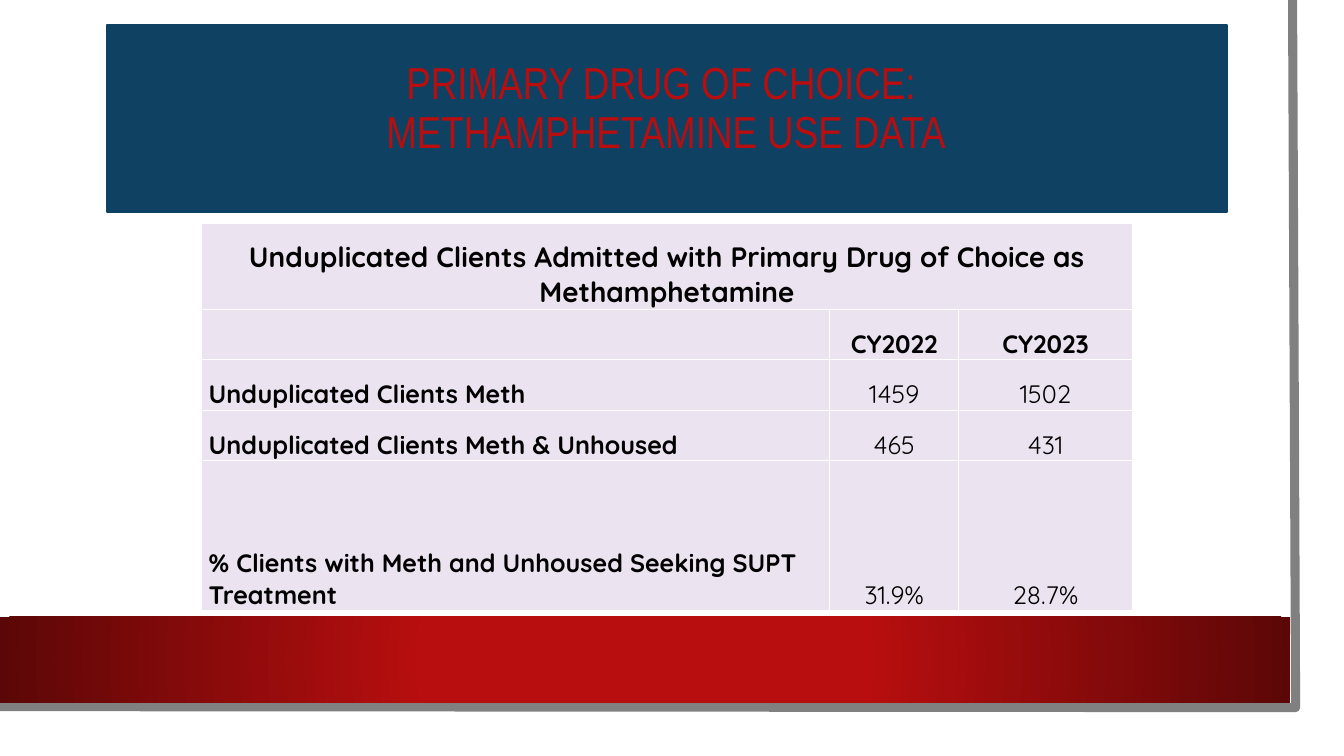
"""Builds the slide with methamphetamine use data."""
from lxml import etree
from pptx import Presentation
from pptx.dml.color import RGBColor
from pptx.enum.shapes import MSO_SHAPE
from pptx.enum.text import MSO_ANCHOR, PP_ALIGN
from pptx.oxml import parse_xml
from pptx.oxml.ns import nsdecls, qn
from pptx.util import Inches, Pt

RECTANGLE = MSO_SHAPE.RECTANGLE
MIDDLE, BOTTOM = MSO_ANCHOR.MIDDLE, MSO_ANCHOR.BOTTOM
LEFT, CENTER = PP_ALIGN.LEFT, PP_ALIGN.CENTER

WHITE, BLACK, GRAY = "FFFFFF", "000000", "808080"
NAVY, RED, DARK_RED, LILAC = "0F4162", "B80E0F", "5C0707", "EBE3F0"

TITLE = "PRIMARY DRUG OF CHOICE: \vMETHAMPHETAMINE USE DATA"
TABLE_TITLE = "Unduplicated Clients Admitted with Primary Drug of Choice as Methamphetamine"
ROWS = [
    (TABLE_TITLE, "", ""),
    ("", "CY2022", "CY2023"),
    ("Unduplicated Clients Meth", "1459", "1502"),
    ("Unduplicated Clients Meth & Unhoused", "465", "431"),
    ("% Clients with Meth and Unhoused Seeking SUPT Treatment", "31.9%", "28.7%"),
]
COLUMN_WIDTHS = [6.23, 1.28, 1.72]
ROW_HEIGHTS = [0.85, 0.5, 0.5, 0.5, 1.49]
EDGE_POINTS = [(12.82, 0), (12.85, 7.02), (-0.03, 7.01)]


def color(value):
    return RGBColor.from_string(value)


def write(frame, text, size=18, font="Quicksand", fill=BLACK, bold=False,
          align=CENTER, spacing=1.0):
    para = frame.paragraphs[0]
    para.text = text
    para.alignment = align
    para.line_spacing = spacing
    for span in para.runs:
        span.font.size = Pt(size)
        span.font.name = font
        span.font.bold = bold
        span.font.color.rgb = color(fill)


def add_panel(page, left, top, width, height, fill, line=None):
    panel = page.shapes.add_shape(RECTANGLE, *map(Inches, (left, top, width, height)))
    panel.shadow.inherit = False
    panel.fill.solid()
    panel.fill.fore_color.rgb = color(fill)
    if line:
        panel.line.color.rgb = color(line)
        panel.line.width = Pt(1.5)
    else:
        panel.line.fill.background()
    return panel


def add_edge(page):
    points = [(Inches(x), Inches(y)) for x, y in EDGE_POINTS]
    builder = page.shapes.build_freeform(*points[0])
    builder.add_line_segments(points[1:], close=False)
    edge = builder.convert_to_shape()
    edge.shadow.inherit = False
    edge.fill.background()
    edge.line.color.rgb = color(GRAY)
    edge.line.width = Pt(6.5)


def add_radial_fill(shape, stops):
    marks = "".join(f'<a:gs pos="{at * 1000}"><a:srgbClr val="{value}"/></a:gs>'
                    for at, value in stops)
    gradient = parse_xml(
        f'<a:gradFill {nsdecls("a")}><a:gsLst>{marks}</a:gsLst><a:path path="circle">'
        '<a:fillToRect l="50000" t="50000" r="50000" b="50000"/></a:path></a:gradFill>')
    solid = shape.fill._xPr.find(qn("a:solidFill"))
    solid.getparent().replace(solid, gradient)


def add_borders(cell):
    properties = cell._tc.get_or_add_tcPr()
    for index, side in enumerate(("lnL", "lnR", "lnT", "lnB")):
        line = etree.Element(qn(f"a:{side}"), w=str(Pt(1)))
        solid = etree.SubElement(line, qn("a:solidFill"))
        etree.SubElement(solid, qn("a:srgbClr"), val=WHITE)
        properties.insert(index, line)


def add_title(page):
    box = page.shapes.add_textbox(Inches(2.31), Inches(-0.58), Inches(8.6), Inches(3.33))
    frame = box.text_frame
    frame.word_wrap = True
    frame.vertical_anchor = MIDDLE
    write(frame, TITLE, size=32, font="Arial Narrow", fill=RED, spacing=0.9)


def add_data_table(page):
    table = page.shapes.add_table(
        len(ROW_HEIGHTS), len(COLUMN_WIDTHS), Inches(2), Inches(2.22),
        Inches(sum(COLUMN_WIDTHS)), Inches(sum(ROW_HEIGHTS))).table
    for column, width in zip(table.columns, COLUMN_WIDTHS):
        column.width = Inches(width)
    for row, height in zip(table.rows, ROW_HEIGHTS):
        row.height = Inches(height)
    table.cell(0, 0).merge(table.cell(0, 2))
    for r, values in enumerate(ROWS):
        for c, text in enumerate(values):
            cell = table.cell(r, c)
            cell.fill.solid()
            cell.fill.fore_color.rgb = color(LILAC)
            cell.vertical_anchor = BOTTOM
            cell.margin_left = cell.margin_right = Inches(0.07)
            cell.margin_top = cell.margin_bottom = 0
            add_borders(cell)
            if text:
                write(cell.text_frame, text, size=20 if r == 0 else 18,
                      bold=r < 2 or c == 0, align=LEFT if r and c == 0 else CENTER)


def main():
    deck = Presentation()
    deck.slide_width, deck.slide_height = Inches(13.33), Inches(7.5)
    page = deck.slides.add_slide(deck.slide_layouts[6])
    add_panel(page, 0, 0, 13.1, 7.27, WHITE)
    add_edge(page)
    band = add_panel(page, 0, 6.12, 12.8, 0.85, RED)
    add_radial_fill(band, [(34, RED), (100, DARK_RED)])
    add_panel(page, 1.06, 0.25, 11.11, 1.85, NAVY, line=NAVY)
    add_title(page)
    add_data_table(page)
    deck.save("out.pptx")


if __name__ == "__main__":
    main()
